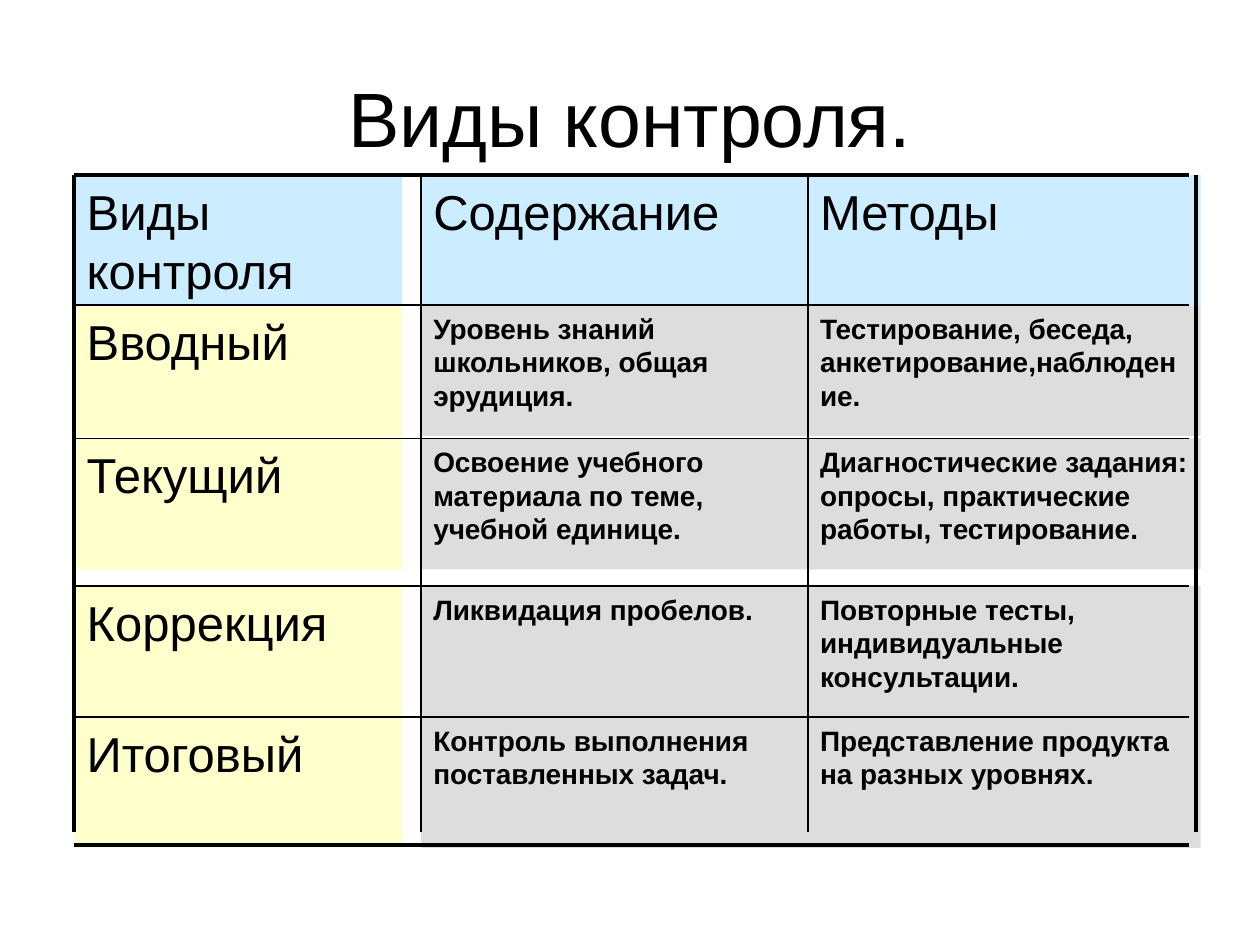
import dataclasses
import typing

import lxml.etree
import pptx
import pptx.dml.color
import pptx.enum.shapes
import pptx.enum.text
import pptx.oxml.ns
import pptx.util

BLACK = pptx.dml.color.RGBColor(0x00, 0x00, 0x00)
SKY = pptx.dml.color.RGBColor(0xCC, 0xEC, 0xFF)
CREAM = pptx.dml.color.RGBColor(0xFF, 0xFF, 0xCC)
GREY = pptx.dml.color.RGBColor(0xDD, 0xDD, 0xDD)

FONT = "Arial"
COLUMN_LEFTS = (0.59, 3.34, 6.41)
COLUMN_WIDTHS = (2.6, 3.12, 3.12)
ROW_TOPS = (1.39, 2.42, 3.48, 4.65, 5.69)
ROW_HEIGHT = 1.04
RULE_RIGHT, RULE_BOTTOM = 9.44, 6.6
HORIZONTAL_RULES = ROW_TOPS + (6.71,)
VERTICAL_RULES = COLUMN_LEFTS + (9.49,)
THICK, THIN = 2.25, 1

ROWS = (
    ("Виды контроля", "Содержание", "Методы"),
    ("Вводный", "Уровень знаний школьников, общая эрудиция.",
     "Тестирование, беседа, анкетирование,наблюдение."),
    ("Текущий", "Освоение учебного материала по теме, учебной единице.",
     "Диагностические задания: опросы, практические работы, тестирование."),
    ("Коррекция", "Ликвидация пробелов.",
     "Повторные тесты, индивидуальные консультации."),
    ("Итоговый", "Контроль выполнения поставленных задач.",
     "Представление продукта на разных уровнях."),
)


@dataclasses.dataclass(frozen=True)
class Style:
    """Fill and lettering of one kind of cell."""

    fill: pptx.dml.color.RGBColor
    size: float
    bold: bool = False


HEADER = Style(SKY, 28)
KIND = Style(CREAM, 28)
DETAIL = Style(GREY, 16, True)


@dataclasses.dataclass(frozen=True)
class Cell:
    """One cell placed by its row and column."""

    row: int
    column: int
    text: str

    @property
    def style(self) -> Style:
        """Choose the look from the place in the grid."""
        if self.row == 0:
            return HEADER
        return KIND if self.column == 0 else DETAIL


def write(box: typing.Any, text: str, size: float, bold: bool,
          align: pptx.enum.text.PP_ALIGN, anchor: pptx.enum.text.MSO_ANCHOR) -> None:
    """Put one run of text into a wrapping box."""
    frame = box.text_frame
    frame.word_wrap = True
    frame.vertical_anchor = anchor
    para = frame.paragraphs[0]
    para.alignment = align
    span = para.add_run()
    span.text = text
    span.font.name = FONT
    span.font.size = pptx.util.Pt(size)
    span.font.bold = bold
    span.font.color.rgb = BLACK


def draw_title(page: typing.Any, text: str) -> None:
    """Draw the centred heading."""
    box = page.shapes.add_textbox(*map(pptx.util.Inches, (0.5, 0.3, 9, 1.25)))
    write(box, text, 44, False, pptx.enum.text.PP_ALIGN.CENTER,
          pptx.enum.text.MSO_ANCHOR.MIDDLE)


def draw_cell(shapes: typing.Any, cell: Cell) -> None:
    """Draw a filled cell with its text."""
    place = (COLUMN_LEFTS[cell.column], ROW_TOPS[cell.row],
             COLUMN_WIDTHS[cell.column], ROW_HEIGHT)
    box = shapes.add_shape(pptx.enum.shapes.MSO_SHAPE.RECTANGLE,
                           *map(pptx.util.Inches, place))
    box.shadow.inherit = False
    box.fill.solid()
    box.fill.fore_color.rgb = cell.style.fill
    box.line.fill.background()
    write(box, cell.text, cell.style.size, cell.style.bold,
          pptx.enum.text.PP_ALIGN.LEFT, pptx.enum.text.MSO_ANCHOR.TOP)


def draw_rule(shapes: typing.Any, ends: tuple[float, float, float, float],
              weight: float) -> None:
    """Draw a straight black rule without a shadow."""
    rule = shapes.add_connector(pptx.enum.shapes.MSO_CONNECTOR.STRAIGHT,
                                *map(pptx.util.Inches, ends))
    rule.line.color.rgb = BLACK
    rule.line.width = pptx.util.Pt(weight)
    lxml.etree.SubElement(rule._element.spPr, pptx.oxml.ns.qn("a:effectLst"))


def rule_weight(position: float, rules: tuple[float, ...]) -> float:
    """Make the outer rules thick and the inner ones thin."""
    return THICK if position in (rules[0], rules[-1]) else THIN


def main() -> None:
    """Build the slide and save it."""
    deck = pptx.Presentation()
    deck.slide_width = pptx.util.Inches(10)
    deck.slide_height = pptx.util.Inches(7.5)
    page = deck.slides.add_slide(deck.slide_layouts[6])
    draw_title(page, "Виды контроля.")

    grid = page.shapes.add_group_shape().shapes
    cells = [Cell(row, column, text)
             for row, texts in enumerate(ROWS)
             for column, text in enumerate(texts)]
    for cell in reversed(cells):
        draw_cell(grid, cell)
    for top in HORIZONTAL_RULES:
        draw_rule(grid, (COLUMN_LEFTS[0], top, RULE_RIGHT, top),
                  rule_weight(top, HORIZONTAL_RULES))
    for left in VERTICAL_RULES:
        draw_rule(grid, (left, ROW_TOPS[0], left, RULE_BOTTOM),
                  rule_weight(left, VERTICAL_RULES))
    deck.save("out.pptx")


if __name__ == "__main__":
    main()
